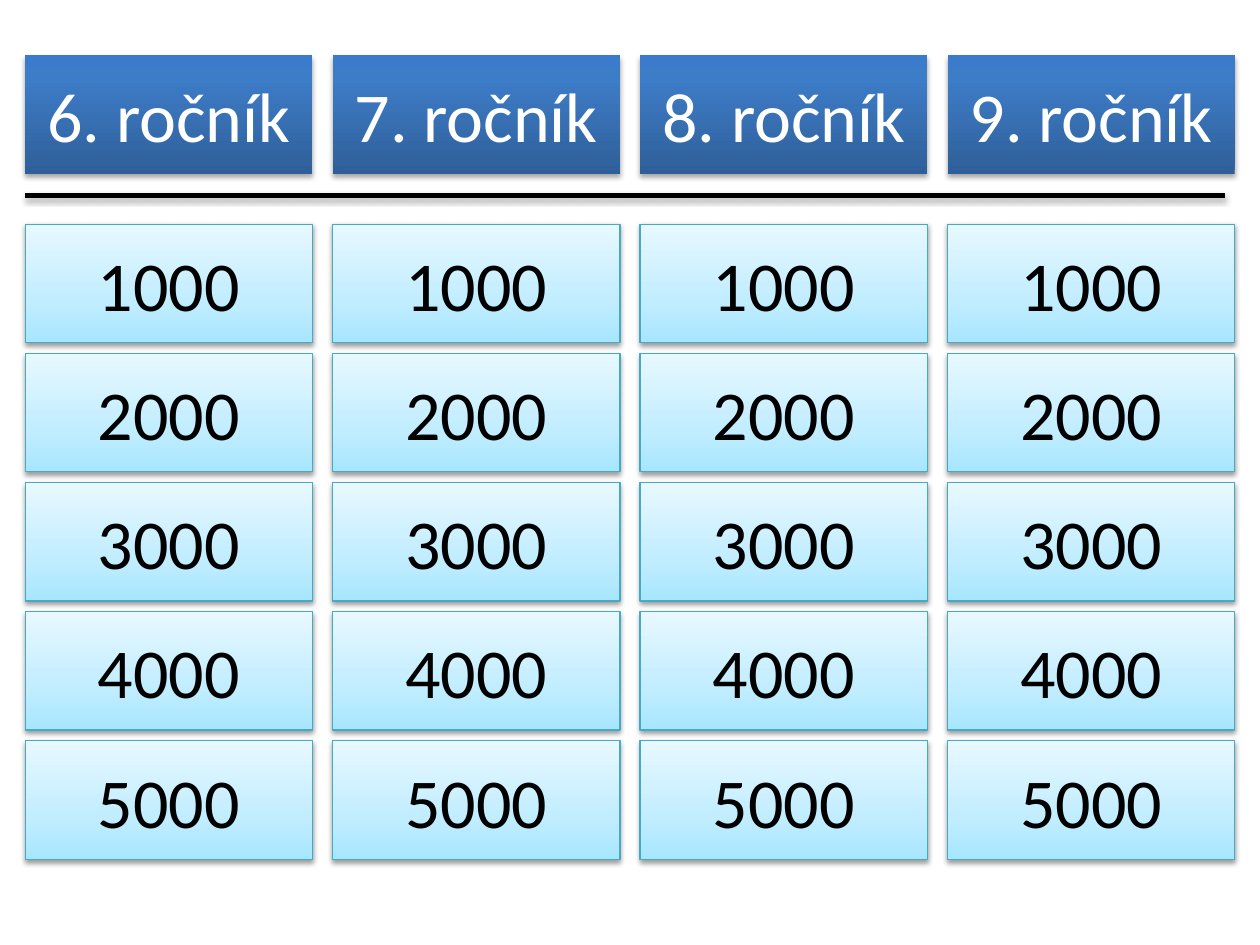
import copy

import pptx
import pptx.dml.color
import pptx.enum.shapes
import pptx.enum.text
import pptx.oxml
import pptx.oxml.ns
import pptx.util

Inches, Pt = pptx.util.Inches, pptx.util.Pt
RGBColor = pptx.dml.color.RGBColor
qn = pptx.oxml.ns.qn

BLACK = RGBColor(0x00, 0x00, 0x00)
WHITE = RGBColor(0xFF, 0xFF, 0xFF)
TEAL = RGBColor(0x46, 0xAA, 0xC5)

HEADER = {
    "stops": [(0, RGBColor(0x2F, 0x5F, 0x99)), (0.8, RGBColor(0x3D, 0x7C, 0xC7)),
              (1, RGBColor(0x3A, 0x7C, 0xCB))],
    "line": None, "text": WHITE, "shadow": (35, 1.8),
}
VALUE = {
    "stops": [(0, RGBColor(0xA7, 0xE6, 0xFF)), (0.35, RGBColor(0xC1, 0xED, 0xFF)),
              (1, RGBColor(0xE7, 0xF8, 0xFF))],
    "line": TEAL, "text": BLACK, "shadow": (38, 1.6),
}

GRADES = ["6. ročník", "7. ročník", "8. ročník", "9. ročník"]
POINTS = ["1000", "2000", "3000", "4000", "5000"]

LEFT, COLUMN_STEP = 0.2, 2.44
HEADER_TOP, RULE_Y = 0.44, 1.55
VALUES_TOP, ROW_STEP = 1.78, 1.025
TILE_W, TILE_H = 2.28, 0.94


def set_gradient(sp, stops):
    """Fill bottom to top with (position, colour) stops."""
    fill = sp.fill
    fill.gradient()
    fill.gradient_angle = 90
    gs_list = sp._element.spPr.find(".//" + qn("a:gsLst"))
    while len(gs_list) < len(stops):
        gs_list.append(copy.deepcopy(gs_list[0]))
    for stop, (position, color) in zip(fill.gradient_stops, stops):
        stop.position = position
        stop.color.rgb = color


def add_shadow(sp, opacity, distance):
    """Add a soft black shadow below; call it once the line is set."""
    sp._element.spPr.append(pptx.oxml.parse_xml(
        f'<a:effectLst {pptx.oxml.ns.nsdecls("a")}>'
        f'<a:outerShdw blurRad="{Pt(3.1)}" dist="{Pt(distance)}" dir="5400000" '
        f'rotWithShape="0"><a:srgbClr val="{BLACK}">'
        f'<a:alpha val="{opacity * 1000}"/></a:srgbClr></a:outerShdw></a:effectLst>'))


def add_tile(slide, text, left, top, style):
    sp = slide.shapes.add_shape(
        pptx.enum.shapes.MSO_SHAPE.RECTANGLE,
        Inches(left), Inches(top), Inches(TILE_W), Inches(TILE_H))
    set_gradient(sp, style["stops"])
    if style["line"] is None:
        sp.line.fill.background()
    else:
        sp.line.color.rgb = style["line"]
        sp.line.width = Pt(0.75)
    add_shadow(sp, *style["shadow"])

    tf = sp.text_frame
    tf.vertical_anchor = pptx.enum.text.MSO_ANCHOR.MIDDLE
    p = tf.paragraphs[0]
    p.alignment = pptx.enum.text.PP_ALIGN.CENTER
    r = p.add_run()
    r.text = text
    for name, value in {"name": "Calibri", "size": Pt(40)}.items():
        setattr(r.font, name, value)
    r.font.color.rgb = style["text"]


def add_rule(slide):
    line = slide.shapes.add_connector(
        pptx.enum.shapes.MSO_CONNECTOR.STRAIGHT,
        Inches(LEFT), Inches(RULE_Y), Inches(9.72), Inches(RULE_Y))
    line.line.color.rgb = BLACK
    line.line.width = Pt(3)
    add_shadow(line, *HEADER["shadow"])


def main():
    prs = pptx.Presentation()
    prs.slide_width, prs.slide_height = Inches(10), Inches(7.5)
    slide = prs.slides.add_slide(prs.slide_layouts[6])
    for column, grade in enumerate(GRADES):
        left = LEFT + column * COLUMN_STEP
        add_tile(slide, grade, left, HEADER_TOP, HEADER)
        for row, points in enumerate(POINTS):
            add_tile(slide, points, left, VALUES_TOP + row * ROW_STEP, VALUE)
    add_rule(slide)
    prs.save("out.pptx")


if __name__ == "__main__":
    main()
